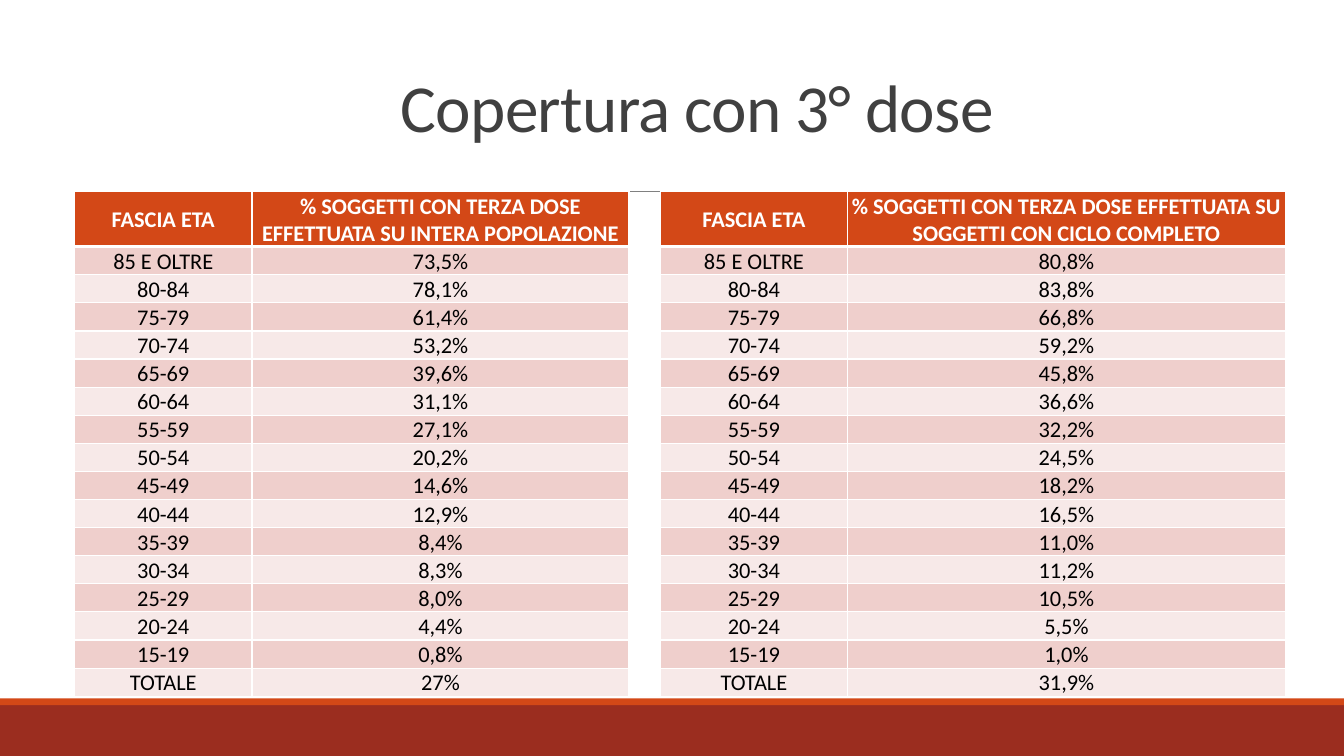
from dataclasses import dataclass

from lxml import etree
from pptx import Presentation
from pptx.dml import color
from pptx.enum import shapes, text
from pptx.oxml import ns
from pptx import util as u


@dataclass(frozen=True)
class Theme:
    font: str = "Calibri"
    title_size: int = 48
    table_size: int = 16
    title: str = "404040"
    accent: str = "D34817"
    footer: str = "9B2D1F"
    rule: str = "808080"
    white: str = "FFFFFF"
    body: str = "000000"
    bands: tuple = ("EFCFCC", "F7E9E8")


THEME = Theme()
AGE_GROUPS = ["85 E OLTRE", *(f"{age}-{age + 4}" for age in range(80, 14, -5)), "TOTALE"]
POPULATION_COVERAGE = (
    "73,5% 78,1% 61,4% 53,2% 39,6% 31,1% 27,1% 20,2% "
    "14,6% 12,9% 8,4% 8,3% 8,0% 4,4% 0,8% 27%"
).split()
FULL_CYCLE_COVERAGE = (
    "80,8% 83,8% 66,8% 59,2% 45,8% 36,6% 32,2% 24,5% "
    "18,2% 16,5% 11,0% 11,2% 10,5% 5,5% 1,0% 31,9%"
).split()


def rgb(value):
    return color.RGBColor.from_string(value)


def style_paragraph(paragraph, size, ink, bold=False):
    paragraph.alignment = text.PP_ALIGN.CENTER
    paragraph.font.name = THEME.font
    paragraph.font.size = u.Pt(size)
    paragraph.font.bold = bold
    paragraph.font.color.rgb = rgb(ink)


def add_band(slide, left, top, width, height, fill):
    band = slide.shapes.add_shape(
        shapes.MSO_SHAPE.RECTANGLE, u.Cm(left), u.Cm(top), u.Cm(width), u.Cm(height)
    )
    band.shadow.inherit = False
    band.fill.solid()
    band.fill.fore_color.rgb = rgb(fill)
    band.line.fill.background()


def add_footer(slide, left, top, width, height):
    stripe = 0.17
    add_band(slide, left, top + stripe, width, height - stripe, THEME.footer)
    add_band(slide, left, top, width, stripe, THEME.accent)


def add_rule(slide, left, top, width):
    rule = slide.shapes.add_connector(
        shapes.MSO_CONNECTOR.STRAIGHT, u.Cm(left), u.Cm(top), u.Cm(left + width), u.Cm(top)
    )
    rule.line.color.rgb = rgb(THEME.rule)
    rule.line.width = u.Pt(0.5)
    etree.SubElement(rule._element.spPr, ns.qn("a:effectLst"))


def add_title(slide, left, top, width, height, wording):
    frame = slide.shapes.add_textbox(
        u.Cm(left), u.Cm(top), u.Cm(width), u.Cm(height)
    ).text_frame
    frame.word_wrap = True
    frame.vertical_anchor = text.MSO_ANCHOR.BOTTOM
    frame.text = wording
    title = frame.paragraphs[0]
    title.line_spacing = 0.85
    style_paragraph(title, THEME.title_size, THEME.title)
    title.runs[0]._r.get_or_add_rPr().set("spc", "-50")


def set_borders(cell, top, bottom):
    properties = cell._tc.get_or_add_tcPr()
    for side, points in (("L", 1), ("R", 1), ("T", top), ("B", bottom)):
        border = etree.SubElement(properties, ns.qn(f"a:ln{side}"), w=str(u.Pt(points)))
        fill = etree.SubElement(border, ns.qn("a:solidFill"))
        etree.SubElement(fill, ns.qn("a:srgbClr"), val=THEME.white)


def fill_cell(cell, wording, row):
    header = row == 0
    cell.text = wording
    cell.vertical_anchor = text.MSO_ANCHOR.MIDDLE
    cell.margin_left = cell.margin_right = cell.margin_top = u.Cm(0.03)
    cell.margin_bottom = 0
    set_borders(cell, top=3 if row == 1 else 1, bottom=3 if header else 1)
    cell.fill.solid()
    cell.fill.fore_color.rgb = rgb(THEME.accent if header else THEME.bands[(row - 1) % 2])
    style_paragraph(
        cell.text_frame.paragraphs[0],
        THEME.table_size,
        THEME.white if header else THEME.body,
        bold=header,
    )


def add_coverage_table(slide, left, top, width, height, age_width, heading, coverage):
    rows = [("FASCIA ETA", heading), *zip(AGE_GROUPS, coverage)]
    table = slide.shapes.add_table(
        len(rows), 2, u.Cm(left), u.Cm(top), u.Cm(width), u.Cm(height)
    ).table
    table.columns[0].width = u.Cm(age_width)
    table.columns[1].width = u.Cm(width - age_width)
    row_height = 0.7
    for index, wordings in enumerate(rows):
        table.rows[index].height = u.Cm(row_height)
        for column, wording in enumerate(wordings):
            fill_cell(table.cell(index, column), wording, index)
    table.rows[0].height = u.Cm(height - row_height * len(coverage))


def add_coverage_slide(presentation):
    slide = presentation.slides.add_slide(presentation.slide_layouts[6])
    add_footer(slide, 0, 17.6, 33.87, 1.45)
    add_rule(slide, 3.33, 4.83, 27.69)
    add_title(slide, 3.6, 0.76, 27.94, 3.05, "Copertura con 3° dose")
    add_coverage_table(
        slide, 1.88, 4.83, 13.97, 12.5, 4.47,
        "% SOGGETTI CON TERZA DOSE EFFETTUATA SU INTERA POPOLAZIONE",
        POPULATION_COVERAGE,
    )
    add_coverage_table(
        slide, 16.64, 4.83, 15.75, 12.5, 4.72,
        "% SOGGETTI CON TERZA DOSE EFFETTUATA SU SOGGETTI CON CICLO COMPLETO",
        FULL_CYCLE_COVERAGE,
    )


def main():
    presentation = Presentation()
    presentation.slide_width = u.Cm(33.87)
    presentation.slide_height = u.Cm(19.05)
    add_coverage_slide(presentation)
    presentation.save("out.pptx")


if __name__ == "__main__":
    main()
